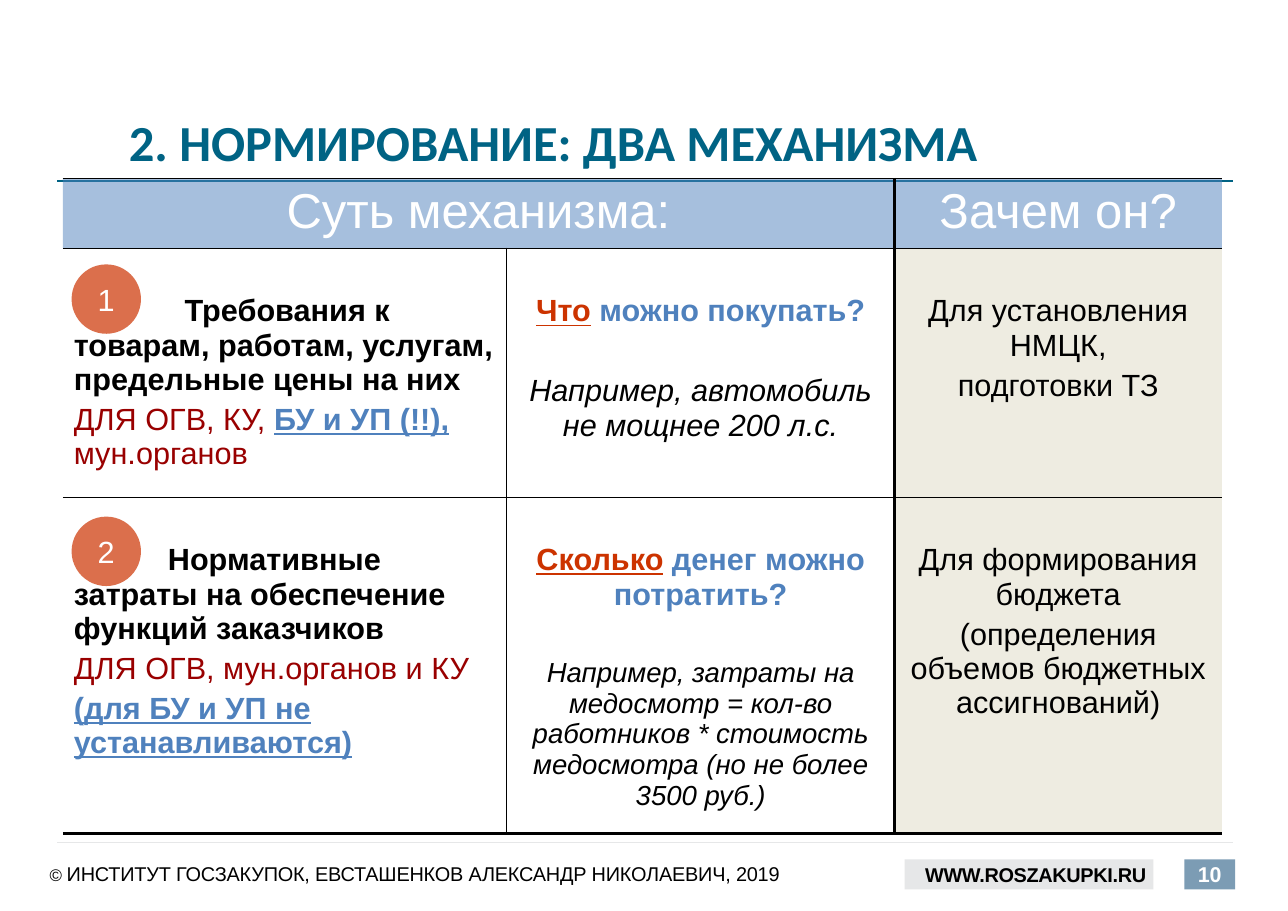
from dataclasses import dataclass
from itertools import accumulate

from lxml.etree import SubElement
from pptx import Presentation
from pptx.dml.color import RGBColor
from pptx.enum.shapes import MSO_CONNECTOR, MSO_SHAPE
from pptx.enum.text import MSO_ANCHOR, PP_ALIGN
from pptx.oxml import parse_xml
from pptx.oxml.ns import nsdecls, qn
from pptx.util import Emu, Inches, Pt

WIDTH, HEIGHT = Inches(11.69), Inches(8.27)


@dataclass(frozen=True)
class Theme:
    teal: str = "006384"
    blue: str = "4F81BD"
    red: str = "CC3300"
    wine: str = "990000"
    sand: str = "EEECE1"
    pale: str = "E6E7E8"
    steel: str = "7C9CB4"
    black: str = "000000"
    white: str = "FFFFFF"
    body: str = "Arial"
    head: str = "Calibri"
    title: float = 33
    top: float = 32
    text: float = 20
    note: float = 18
    page: float = 14
    foot: float = 13
    mark: float = 11
    thin: float = 1
    thick: float = 2.25


T = Theme()


@dataclass(frozen=True)
class Bit:
    text: str
    color: str = T.black
    bold: bool = False
    under: bool = False
    slant: bool = False
    size: float | None = None
    space: int = 0


@dataclass(frozen=True)
class Para:
    bits: tuple[Bit, ...]
    size: float = T.text
    align: PP_ALIGN = PP_ALIGN.CENTER
    face: str = T.body
    before: float = 4
    indent: float = 0


@dataclass(frozen=True)
class Box:
    left: float
    top: float
    width: float
    height: float

    def place(self) -> tuple[Emu, Emu, Emu, Emu]:
        return across(self.left), down(self.top), across(self.width), down(self.height)


@dataclass(frozen=True)
class Rule:
    y: float
    color: str
    width: float


@dataclass(frozen=True)
class Plate:
    box: Box
    fill: str
    para: Para
    inset: float = 0


def across(share: float) -> Emu:
    return Emu(round(WIDTH * share / 100))


def down(share: float) -> Emu:
    return Emu(round(HEIGHT * share / 100))


def left(*bits: Bit, indent: float = 0) -> Para:
    return Para(bits, align=PP_ALIGN.LEFT, indent=indent)


def mid(*bits: Bit, size: float = T.text, before: float = 4) -> Para:
    return Para(bits, size, before=before)


def style(font, bit: Bit) -> None:
    font.color.rgb = RGBColor.from_string(bit.color)
    font.bold, font.italic, font.underline = bit.bold, bit.slant, bit.under
    if bit.size:
        font.size = Pt(bit.size)


def write(frame, paras: list[Para]) -> None:
    for n, para in enumerate(paras):
        line = frame.add_paragraph() if n else frame.paragraphs[0]
        line.alignment = para.align
        line.space_before = Pt(para.before if n else 0)
        if para.indent:
            line._p.get_or_add_pPr().set("indent", str(across(para.indent)))
        line.font.name, line.font.size = para.face, Pt(para.size)
        if len(para.bits) == 1:
            style(line.font, para.bits[0])
        for bit in para.bits:
            run = line.add_run()
            run.text = bit.text
            if len(para.bits) > 1:
                style(run.font, bit)
            if bit.space:
                run._r.get_or_add_rPr().set("spc", str(bit.space))


def paint(fill, color: str, alpha: int = 100) -> None:
    fill.solid()
    fill.fore_color.rgb = RGBColor.from_string(color)
    if alpha < 100:
        tone = fill._xPr.find(f".//{qn('a:srgbClr')}")
        SubElement(tone, qn("a:alpha")).set("val", str(alpha * 1000))


def add_form(slide, kind: MSO_SHAPE, box: Box, color: str, para: Para, alpha: int = 100):
    form = slide.shapes.add_shape(kind, *box.place())
    form.shadow.inherit = False
    paint(form.fill, color, alpha)
    form.line.fill.background()
    frame = form.text_frame
    frame.word_wrap = False
    frame.vertical_anchor = MSO_ANCHOR.MIDDLE
    write(frame, [para])
    return form


def add_label(slide, box: Box, para: Para):
    frame = slide.shapes.add_textbox(*box.place()).text_frame
    frame.word_wrap = True
    frame.vertical_anchor = MSO_ANCHOR.MIDDLE
    frame.margin_left = frame.margin_right = frame.margin_top = frame.margin_bottom = 0
    write(frame, [para])


def add_rule(slide, rule: Rule) -> None:
    y = down(rule.y)
    line = slide.shapes.add_connector(MSO_CONNECTOR.STRAIGHT, across(4.45), y, across(95.72), y)
    line.line.color.rgb = RGBColor.from_string(rule.color)
    line.line.width = Pt(rule.width)
    SubElement(line._element.spPr, qn("a:effectLst"))


def edge(cell, sides: dict[str, float]) -> None:
    props = cell._tc.get_or_add_tcPr()
    for n, (side, width) in enumerate(sides.items()):
        ink = f'<a:solidFill><a:srgbClr val="{T.black}"/></a:solidFill>' if width else "<a:noFill/>"
        props.insert(n, parse_xml(f'<a:ln{side} {nsdecls("a")} w="{Pt(width)}">{ink}</a:ln{side}>'))


COLS = (34.47, 30.11, 25.41)
ROWS = (7.13, 27.33, 35.07)
GRID = Box(4.88, 19.59, sum(COLS), sum(ROWS))
WALLS = (0, T.thin, T.thick, 0)
FLOORS = (T.thin, T.thin, T.thin, T.thick)
CELLS = [
    [[mid(Bit("Суть механизма:", T.white), size=T.top)], [],
     [mid(Bit("Зачем он?", T.white), size=T.top)]],
    [[left(Bit("Требования к товарам, работам, услугам, предельные цены на них", bold=True), indent=8.6),
      left(Bit("ДЛЯ ОГВ, КУ, ", T.wine), Bit("БУ и УП (!!),", T.blue, True, True),
           Bit(" мун.органов", T.wine))],
     [mid(Bit("Что", T.red, True, True), Bit(" можно покупать?", T.blue, True)),
      mid(Bit("Например, автомобиль не мощнее 200 л.с.", slant=True), before=30)],
     [mid(Bit("Для установления НМЦК,")), mid(Bit("подготовки ТЗ"))]],
    [[left(Bit("Нормативные затраты на обеспечение функций заказчиков", bold=True), indent=7.3),
      left(Bit("ДЛЯ ОГВ, мун.органов и КУ", T.wine)),
      left(Bit("(для БУ и УП не устанавливаются)", T.blue, True, True))],
     [mid(Bit("Сколько", T.red, True, True), Bit(" денег можно потратить?", T.blue, True)),
      mid(Bit("Например, затраты на медосмотр = кол-во работников * стоимость медосмотра "
              "(но не более 3500 руб.)", slant=True), size=T.note, before=30)],
     [mid(Bit("Для формирования бюджета")),
      mid(Bit("(определения объемов бюджетных ассигнований)"))]],
]
PLATES = [
    Plate(Box(70.23, 94.32, 19.33, 3.3), T.pale,
          Para((Bit("WWW.ROSZAKUPKI.RU", bold=True, space=-20),), T.foot, PP_ALIGN.LEFT), 1.6),
    Plate(Box(91.96, 94.32, 3.94, 3.3), T.steel,
          Para((Bit("10", T.white, True, space=-20),), T.page)),
]
RULES = [Rule(92.5, T.pale, 0.85), Rule(19.83, T.teal, 1.42)]
LABELS = [
    (Box(3.85, 93.4, 58.43, 4.96),
     Para((Bit("© ", size=T.mark),
           Bit("ИНСТИТУТ ГОСЗАКУПОК, ЕВСТАШЕНКОВ АЛЕКСАНДР НИКОЛАЕВИЧ, 2019", space=-10)),
          T.foot, PP_ALIGN.LEFT)),
    (Box(10.01, 7.13, 89.99, 16.69),
     Para((Bit("2. НОРМИРОВАНИЕ: ДВА МЕХАНИЗМА", T.teal, True),), T.title, PP_ALIGN.LEFT, T.head)),
]
BALLS = {"1": 29.02, "2": 56.71}


def add_grid(slide) -> None:
    table = slide.shapes.add_table(len(ROWS), len(COLS), *GRID.place()).table
    table.first_row = table.horz_banding = False
    for col, share in zip(table.columns, COLS):
        col.width = across(share)
    for row, share in zip(table.rows, ROWS):
        row.height = down(share)
    table.cell(0, 0).merge(table.cell(0, 1))
    for r, row in enumerate(CELLS):
        for c, paras in enumerate(row):
            cell = table.cell(r, c)
            if r == 0:
                paint(cell.fill, T.blue, 50)
            elif c == 2:
                paint(cell.fill, T.sand)
            else:
                cell.fill.background()
            if r:
                cell.margin_top = down(5.05)
            write(cell.text_frame, paras)
            last = 2 if r == 0 and c == 0 else c + 1
            edge(cell, {"L": WALLS[c if r or c != 1 else 0], "R": WALLS[last],
                        "T": FLOORS[r], "B": FLOORS[r + 1]})


def main() -> None:
    deck = Presentation()
    deck.slide_width, deck.slide_height = WIDTH, HEIGHT
    slide = deck.slides.add_slide(deck.slide_layouts[6])
    for plate in PLATES:
        form = add_form(slide, MSO_SHAPE.RECTANGLE, plate.box, plate.fill, plate.para)
        frame = form.text_frame
        frame.margin_left, frame.margin_right = across(plate.inset), 0
    for rule in RULES:
        add_rule(slide, rule)
    for box, para in LABELS:
        add_label(slide, box, para)
    add_grid(slide)
    for digit, top in BALLS.items():
        add_form(slide, MSO_SHAPE.OVAL, Box(5.56, top, 5.39, 7.62), T.red, mid(Bit(digit, T.white)), 70)
    deck.save("out.pptx")


if __name__ == "__main__":
    main()
